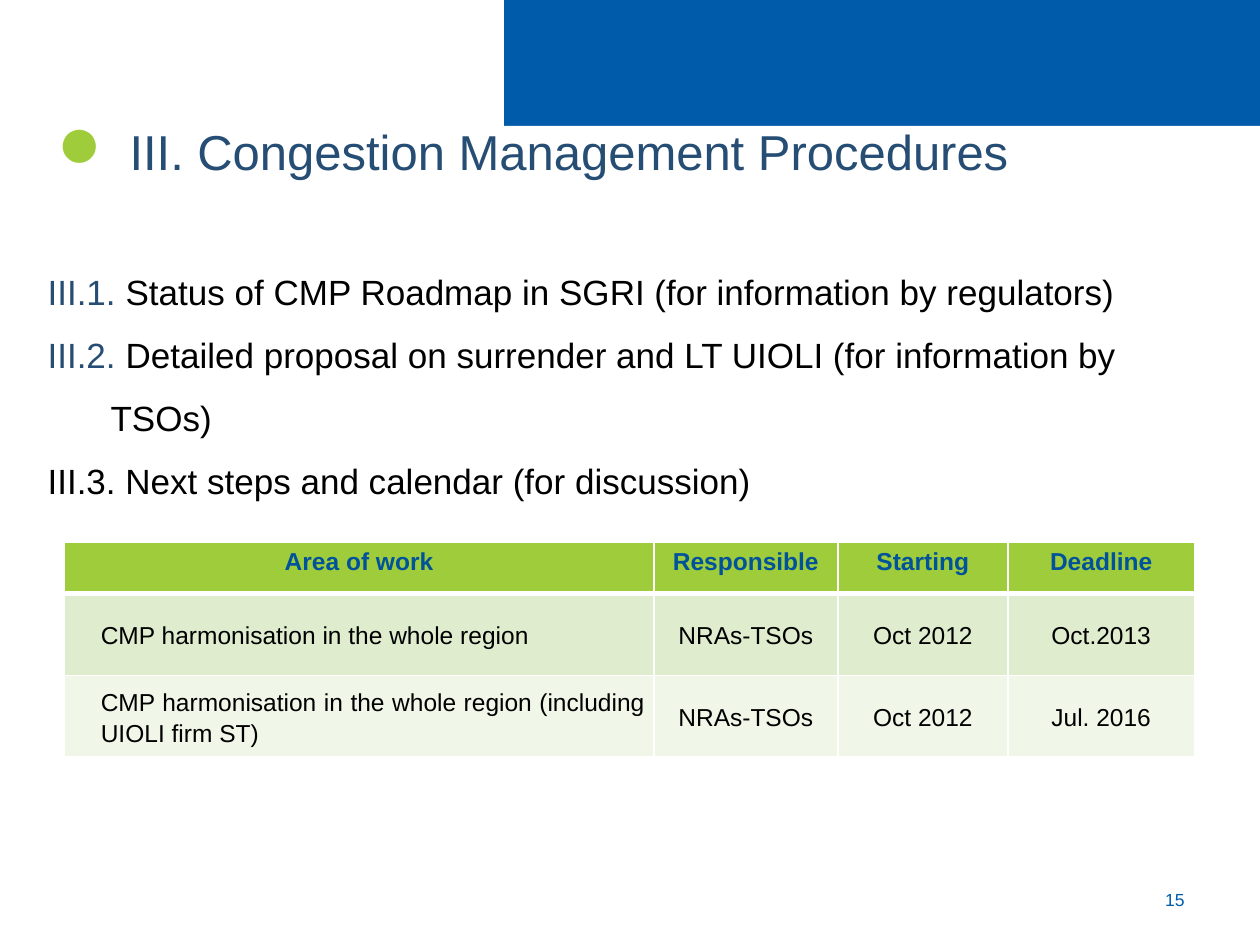
import pptx
import pptx.dml.color
import pptx.enum.shapes
import pptx.enum.text
import pptx.oxml
import pptx.oxml.ns
import pptx.util
from dataclasses import dataclass

Inches = pptx.util.Inches
Align = pptx.enum.text.PP_ALIGN
Anchor = pptx.enum.text.MSO_ANCHOR


@dataclass(frozen=True)
class Theme:
    font: str = "Arial"
    blue: str = "005BAB"
    navy: str = "264D74"
    green: str = "9ECC3B"
    header_text: str = "00529B"
    black: str = "000000"
    white: str = "FFFFFF"
    row_fills: tuple = ("DFECCE", "F0F6E8")
    title_size: int = 28
    body_size: int = 20
    table_size: int = 14
    number_size: int = 10
    bullet_size: int = 44


THEME = Theme()
ROWS = [
    ("CMP harmonisation in the whole region", "NRAs-TSOs", "Oct 2012", "Oct.2013"),
    ("CMP harmonisation in the whole region (including UIOLI firm ST)",
     "NRAs-TSOs", "Oct 2012", "Jul. 2016"),
]
HEADINGS = ("Area of work", "Responsible", "Starting", "Deadline")
AGENDA = [
    [("III.1. ", THEME.navy),
     ("Status of CMP Roadmap in SGRI (for information by regulators)", THEME.black)],
    [("III.2. ", THEME.navy),
     ("Detailed proposal on surrender and LT UIOLI (for information by TSOs)", THEME.black)],
    [("III.3. Next steps and calendar (for discussion)", THEME.black)],
]


def rgb(color):
    return pptx.dml.color.RGBColor.from_string(color)


def paint(shape, color):
    shape.shadow.inherit = False
    shape.fill.solid()
    shape.fill.fore_color.rgb = rgb(color)
    shape.line.fill.background()


def set_indent(paragraph, margin, first=0):
    properties = paragraph._p.get_or_add_pPr()
    properties.set("marL", str(Inches(margin)))
    properties.set("indent", str(Inches(first)))


def write(paragraph, runs, size, bold=False, **formats):
    """Add (text, color) runs and apply paragraph format values."""
    for name, value in formats.items():
        setattr(paragraph, name, value)
    for text, color in runs:
        run = paragraph.add_run()
        run.text = text
        values = {"name": THEME.font, "size": pptx.util.Pt(size), "bold": bold}
        for name, value in values.items():
            setattr(run.font, name, value)
        run.font.color.rgb = rgb(color)


def add_text_frame(slide, box, anchor=Anchor.TOP):
    frame = slide.shapes.add_textbox(*map(Inches, box)).text_frame
    frame.word_wrap = True
    frame.vertical_anchor = anchor
    return frame


def curve(start, control_1, control_2, end, steps=40):
    """Return points along a cubic curve, without its start."""
    points = []
    for step in range(1, steps + 1):
        t = step / steps
        weights = ((1 - t) ** 3, 3 * t * (1 - t) ** 2, 3 * t * t * (1 - t), t ** 3)
        points.append(tuple(
            sum(weight * value for weight, value in zip(weights, axis))
            for axis in zip(start, control_1, control_2, end)))
    return points


def add_wave_header(slide):
    band = slide.shapes.add_shape(
        pptx.enum.shapes.MSO_SHAPE.RECTANGLE, 0, 0, Inches(10), Inches(1.15))
    paint(band, THEME.blue)
    right, crest, left = (10, 0.61), (1.31, 0.21), (0, 1.1)
    outline = [
        *curve(right, (5.1, 0.94), (2.76, 0.21), crest),
        *curve(crest, (0.23, 0.21), (0.03, 0.79), left),
        (0, 7.5), (10, 7.5),
    ]
    builder = slide.shapes.build_freeform(*right, scale=Inches(1))
    builder.add_line_segments(outline, close=True)
    paint(builder.convert_to_shape(), THEME.white)


def add_title(slide):
    marker = add_text_frame(slide, (0.35, 0.57, 0.55, 0.94), Anchor.BOTTOM).paragraphs[0]
    set_indent(marker, 0.39, -0.39)
    write(marker, [("●", THEME.green)], THEME.bullet_size, alignment=Align.CENTER)

    title = add_text_frame(slide, (0.83, 0.82, 7.8, 1.34)).paragraphs[0]
    set_indent(title, 0.69, -0.59)
    write(title, [("III. Congestion Management Procedures", THEME.navy)],
          THEME.title_size, line_spacing=1.2, space_after=pptx.util.Pt(2))


def add_agenda(slide):
    frame = add_text_frame(slide, (0.28, 2.1, 9.53, 1.45))
    for index, runs in enumerate(AGENDA):
        item = frame.add_paragraph() if index else frame.paragraphs[0]
        set_indent(item, 0.5, -0.5)
        write(item, runs, THEME.body_size, line_spacing=1.5 if index else 1.0)


def style_cell(cell, fill, bottom_width=1):
    properties = cell._tc.get_or_add_tcPr()
    for side, width in {"L": 1, "R": 1, "T": 1, "B": bottom_width}.items():
        properties.append(pptx.oxml.parse_xml(
            f'<a:ln{side} {pptx.oxml.ns.nsdecls("a")} w="{pptx.util.Pt(width)}">'
            f'<a:solidFill><a:srgbClr val="{THEME.white}"/></a:solidFill></a:ln{side}>'))
    cell.fill.solid()
    cell.fill.fore_color.rgb = rgb(fill)


def add_schedule(slide):
    table = slide.shapes.add_table(
        len(ROWS) + 1, len(HEADINGS), *map(Inches, (0.51, 4.3, 8.98, 1.71))).table
    for column, width in zip(table.columns, (4.68, 1.46, 1.35, 1.48)):
        column.width = Inches(width)
    for row, height in zip(table.rows, (0.41, 0.65, 0.65)):
        row.height = Inches(height)

    for cell, heading in zip(table.rows[0].cells, HEADINGS):
        style_cell(cell, THEME.green, bottom_width=3)
        write(cell.text_frame.paragraphs[0], [(heading, THEME.header_text)],
              THEME.table_size, bold=True, alignment=Align.CENTER)

    body_format = {
        "vertical_anchor": Anchor.MIDDLE,
        "margin_left": Inches(0.07), "margin_right": Inches(0.07),
        "margin_top": 0, "margin_bottom": 0,
    }
    for row_index, (values, fill) in enumerate(zip(ROWS, THEME.row_fills), start=1):
        for column_index, value in enumerate(values):
            cell = table.cell(row_index, column_index)
            for name, setting in body_format.items():
                setattr(cell, name, setting)
            style_cell(cell, fill)
            paragraph = cell.text_frame.paragraphs[0]
            if column_index == 0:
                set_indent(paragraph, 0.22)
            write(paragraph, [(value, THEME.black)], THEME.table_size, line_spacing=1.15,
                  alignment=Align.CENTER if column_index else Align.JUSTIFY)


def add_page_number(slide):
    number = add_text_frame(slide, (8.94, 6.94, 0.56, 0.4), Anchor.MIDDLE).paragraphs[0]
    write(number, [("15", THEME.blue)], THEME.number_size, alignment=Align.RIGHT)


def main():
    deck = pptx.Presentation()
    deck.slide_width, deck.slide_height = Inches(10), Inches(7.5)
    slide = deck.slides.add_slide(deck.slide_layouts[6])
    add_wave_header(slide)
    add_page_number(slide)
    add_title(slide)
    add_agenda(slide)
    add_schedule(slide)
    deck.save("out.pptx")


if __name__ == "__main__":
    main()
